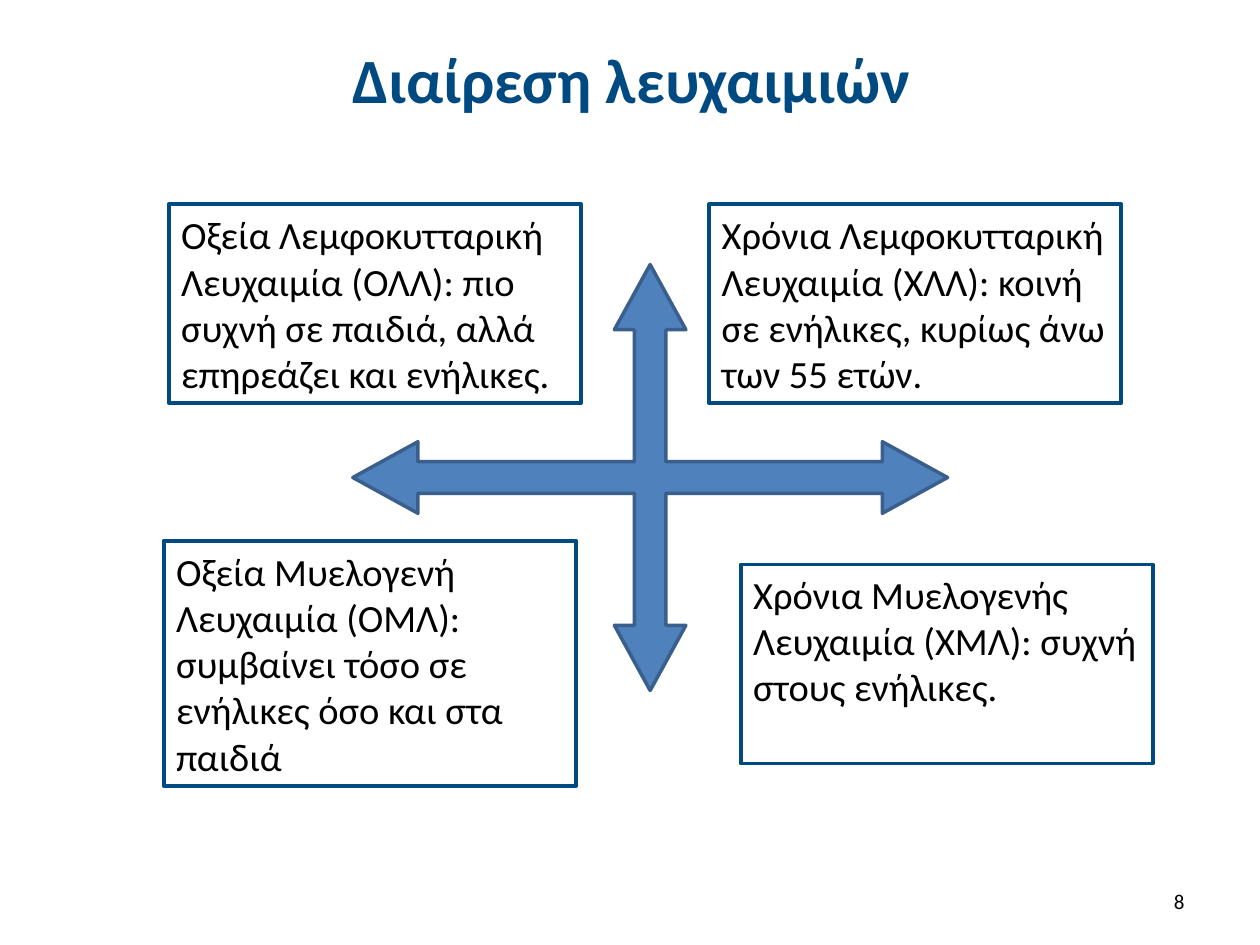
from dataclasses import dataclass

from pptx import Presentation
from pptx.dml.color import RGBColor
from pptx.enum.shapes import MSO_SHAPE
from pptx.enum.text import MSO_ANCHOR, PP_ALIGN
from pptx.util import Inches, Pt


@dataclass(frozen=True)
class Theme:
    font: str = "Calibri"
    navy: str = "004A82"
    black: str = "000000"
    arrow_fill: str = "4F81BD"
    arrow_line: str = "3A5F8C"
    title_size: int = 36
    body_size: int = 22
    number_size: int = 12


THEME = Theme()
BOX_WIDTH = 3.27
LEUKAEMIAS = [
    (1.34, 1.62, 1.58, MSO_ANCHOR.MIDDLE,
     "Οξεία Λεμφοκυτταρική Λευχαιμία (ΟΛΛ): πιο συχνή σε παιδιά, αλλά επηρεάζει και ενήλικες."),
    (5.63, 1.62, 1.58, MSO_ANCHOR.MIDDLE,
     "Χρόνια Λεμφοκυτταρική Λευχαιμία (ΧΛΛ): κοινή σε ενήλικες, κυρίως άνω των 55 ετών."),
    (1.3, 4.29, 1.95, MSO_ANCHOR.MIDDLE,
     "Οξεία Μυελογενή Λευχαιμία (ΟΜΛ): συμβαίνει τόσο σε ενήλικες όσο και στα παιδιά"),
    (5.88, 4.48, 1.58, MSO_ANCHOR.TOP,
     "Χρόνια Μυελογενής Λευχαιμία (ΧΜΛ): συχνή στους ενήλικες."),
]


def write(sp, text, size=THEME.body_size, color=THEME.black, bold=False,
          align=PP_ALIGN.LEFT, anchor=MSO_ANCHOR.MIDDLE):
    tf = sp.text_frame
    tf.word_wrap = True
    tf.vertical_anchor = anchor
    p = tf.paragraphs[0]
    p.alignment = align
    r = p.add_run()
    r.text = text
    r.font.name = THEME.font
    r.font.size = Pt(size)
    r.font.bold = bold
    r.font.color.rgb = RGBColor.from_string(color)


def add_label(s, at, text, **style):
    sp = s.shapes.add_textbox(*map(Inches, at))
    write(sp, text, **style)


def add_outlined(s, kind, at, line, width, fill=None):
    sp = s.shapes.add_shape(kind, *map(Inches, at))
    sp.shadow.inherit = False
    sp.line.color.rgb = RGBColor.from_string(line)
    sp.line.width = Pt(width)
    if fill:
        sp.fill.solid()
        sp.fill.fore_color.rgb = RGBColor.from_string(fill)
    else:
        sp.fill.background()
    return sp


def add_axes(s):
    sp = add_outlined(s, MSO_SHAPE.QUAD_ARROW, (2.8, 2.1, 4.72, 3.38),
                      THEME.arrow_line, 2, fill=THEME.arrow_fill)
    for i, value in enumerate((0.074, 0.084, 0.153)):
        sp.adjustments[i] = value


def main():
    prs = Presentation()
    prs.slide_width, prs.slide_height = Inches(10), Inches(7.5)
    s = prs.slides.add_slide(prs.slide_layouts[6])
    add_label(s, (0.51, 0.13, 9, 0.99), "Διαίρεση λευχαιμιών", size=THEME.title_size,
              color=THEME.navy, bold=True, align=PP_ALIGN.CENTER)
    add_label(s, (7.17, 6.95, 2.33, 0.4), "8", size=THEME.number_size,
              align=PP_ALIGN.RIGHT)
    for left, top, height, anchor, text in LEUKAEMIAS:
        sp = add_outlined(s, MSO_SHAPE.RECTANGLE, (left, top, BOX_WIDTH, height),
                          THEME.navy, 2.25)
        write(sp, text, anchor=anchor)
    add_axes(s)
    prs.save("out.pptx")


if __name__ == "__main__":
    main()
